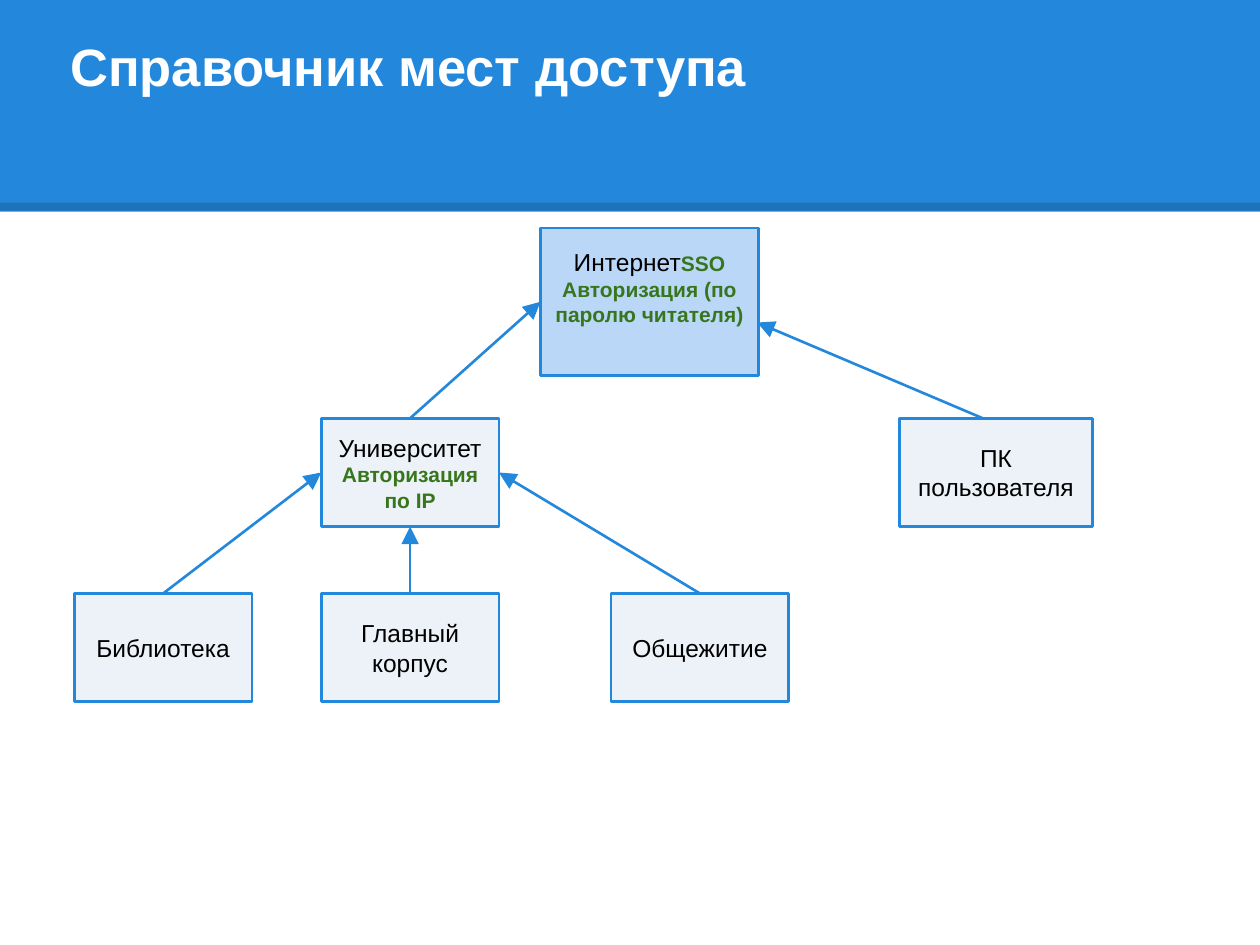
import pptx
import pptx.dml.color
import pptx.enum.shapes
import pptx.enum.text
import pptx.oxml
import pptx.oxml.ns
import pptx.util
from pptx.util import Inches

RGBColor = pptx.dml.color.RGBColor
Anchor = pptx.enum.text.MSO_ANCHOR
Align = pptx.enum.text.PP_ALIGN
BLUE = RGBColor(0x23, 0x88, 0xDB)
SKY = RGBColor(0xBB, 0xD7, 0xF8)
PALE = RGBColor(0xEC, 0xF2, 0xF8)
GREEN = RGBColor(0x38, 0x76, 0x1D)
BLACK = RGBColor(0, 0, 0)
WHITE = RGBColor(255, 255, 255)
TOP, LEFT, BOTTOM, RIGHT = range(4)


def add_span(para, text, size=14, color=BLACK, bold=False):
    span = para.add_run()
    span.text = text
    span.font.name = "Arial"
    span.font.size = pptx.util.Pt(size)
    span.font.color.rgb = color
    span.font.bold = bold


class Diagram:
    """Draws titled box-and-arrow elements in one style on the current page."""

    def __init__(self, page):
        self.page = page

    def frame(self, shape, anchor, bottom=0.1):
        frame = shape.text_frame
        frame.word_wrap = True
        frame.vertical_anchor = anchor
        frame.margin_left = frame.margin_right = frame.margin_top = Inches(0.1)
        frame.margin_bottom = Inches(bottom)
        return frame

    def rectangle(self, left, top, width, height, fill):
        shape = self.page.shapes.add_shape(
            pptx.enum.shapes.MSO_SHAPE.RECTANGLE,
            Inches(left), Inches(top), Inches(width), Inches(height))
        shape.shadow.inherit = False
        shape.fill.solid()
        shape.fill.fore_color.rgb = fill
        shape.line.fill.background()
        return shape

    def title(self, text, left, top, width, height):
        box = self.page.shapes.add_textbox(
            Inches(left), Inches(top), Inches(width), Inches(height))
        frame = self.frame(box, Anchor.BOTTOM)
        add_span(frame.paragraphs[0], text, size=30, color=WHITE, bold=True)

    def box(self, left, top, name, width=1.41, height=0.86, fill=PALE,
            note=None, inline=False, bottom=0.1):
        shape = self.rectangle(left, top, width, height, fill)
        shape.line.color.rgb = BLUE
        shape.line.width = pptx.util.Pt(1.5)
        frame = self.frame(shape, Anchor.MIDDLE, bottom)
        para = frame.paragraphs[0]
        add_span(para, name)
        if note:
            if not inline:
                para = frame.add_paragraph()
            add_span(para, note, size=12, color=GREEN, bold=True)
        for para in frame.paragraphs:
            para.alignment = Align.CENTER
        return shape

    def line(self, start=(0, 0), end=(0, 0), color=BLUE, width=1.5):
        line = self.page.shapes.add_connector(
            pptx.enum.shapes.MSO_CONNECTOR.STRAIGHT,
            *(Inches(value) for value in (*start, *end)))
        line.line.color.rgb = color
        line.line.width = pptx.util.Pt(width)
        pptx.oxml.ns.qn("a:effectLst")
        line._element.spPr.append(self.element("effectLst"))
        return line

    def element(self, name, attributes=""):
        return pptx.oxml.parse_xml(
            f"<a:{name} {pptx.oxml.ns.nsdecls('a')} {attributes}/>")

    def rule(self, start, end, width, opacity):
        line = self.line(start, end, BLACK, width)
        color = line._element.spPr.find(".//" + pptx.oxml.ns.qn("a:srgbClr"))
        color.append(self.element("alpha", f'val="{opacity * 1000}"'))

    def arrow(self, start=(0, 0), end=(0, 0)):
        line = self.line(start, end)
        outline = line._element.spPr.find(pptx.oxml.ns.qn("a:ln"))
        outline.append(self.element("tailEnd", 'type="triangle" w="lg" len="lg"'))
        return line

    def link(self, child, child_side, parent, parent_side):
        line = self.arrow()
        line.begin_connect(child, child_side)
        line.end_connect(parent, parent_side)


def main():
    deck = pptx.Presentation()
    deck.slide_width, deck.slide_height = Inches(10), Inches(7.5)
    diagram = Diagram(deck.slides.add_slide(deck.slide_layouts[6]))

    diagram.rectangle(0, 0, 10, 1.68, BLUE)
    diagram.rule((0, 1.64), (10, 1.64), width=4.5, opacity=15)
    diagram.title("Справочник мест доступа", 0.46, 0.31, 9, 0.56)

    internet = diagram.box(
        4.29, 1.81, "Интернет", width=1.73, height=1.17, fill=SKY,
        note="SSO Авторизация (по паролю читателя)", inline=True, bottom=0.33)
    university = diagram.box(2.55, 3.32, "Университет", note="Авторизация по IP")
    diagram.box(7.14, 3.32, "ПК пользователя", width=1.53)
    library, main_building, dormitory = (
        diagram.box(left, 4.71, name) for left, name in (
            (0.59, "Библиотека"), (2.55, "Главный корпус"), (4.85, "Общежитие")))

    diagram.link(library, TOP, university, LEFT)
    diagram.link(main_building, TOP, university, BOTTOM)
    diagram.link(dormitory, TOP, university, RIGHT)
    diagram.link(university, TOP, internet, LEFT)
    diagram.arrow((7.8, 3.32), (6.01, 2.56))

    deck.save("out.pptx")


if __name__ == "__main__":
    main()
